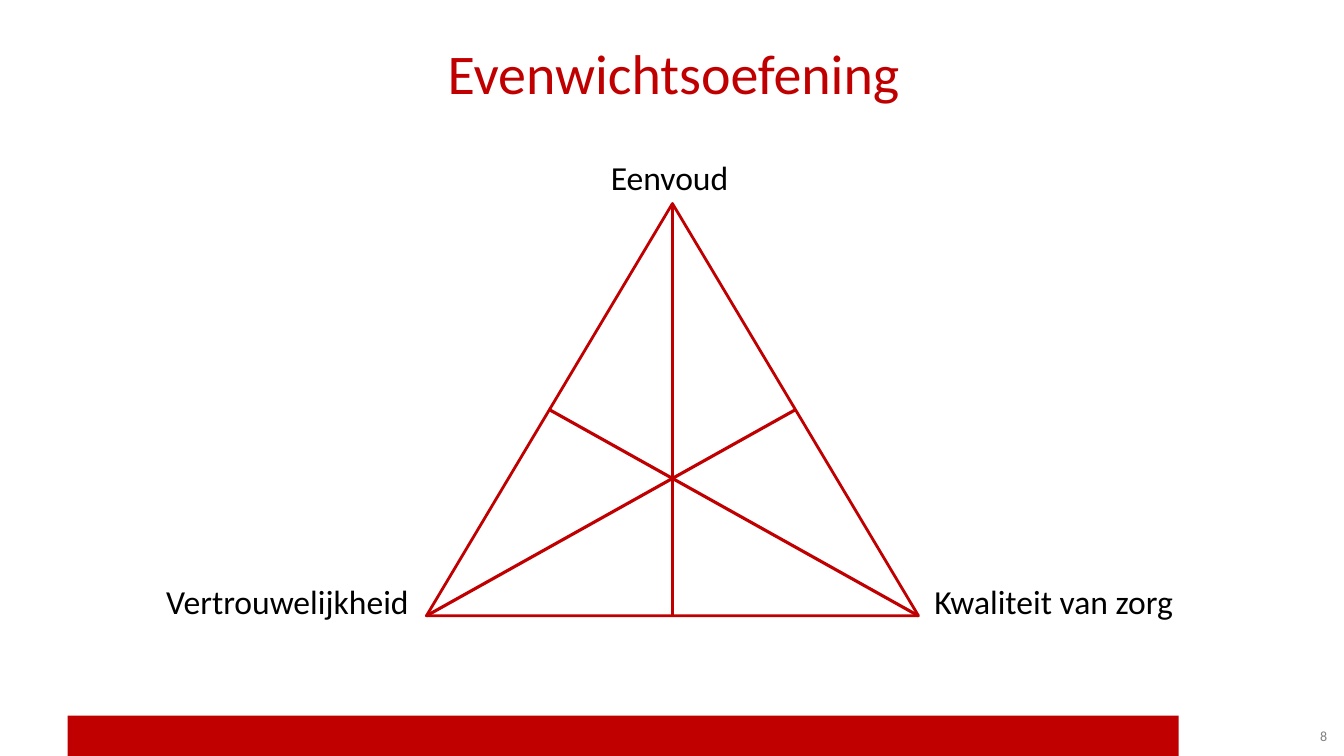
from dataclasses import dataclass

from lxml import etree
from pptx import Presentation
from pptx.dml.color import RGBColor
from pptx.enum.shapes import MSO_CONNECTOR, MSO_SHAPE
from pptx.enum.text import MSO_ANCHOR, PP_ALIGN
from pptx.oxml.ns import qn
from pptx.util import Inches, Pt

RECT, TRIANGLE = MSO_SHAPE.RECTANGLE, MSO_SHAPE.ISOSCELES_TRIANGLE
STRAIGHT = MSO_CONNECTOR.STRAIGHT
TOP, MIDDLE = MSO_ANCHOR.TOP, MSO_ANCHOR.MIDDLE
LEFT, CENTER, RIGHT = PP_ALIGN.LEFT, PP_ALIGN.CENTER, PP_ALIGN.RIGHT

WIDTH, HEIGHT = Inches(13.33), Inches(7.5)
COLUMNS = ROWS = 100
RED, BLACK, GREY = "C00000", "000000", "808080"
FONT = "Calibri"


@dataclass(frozen=True)
class Box:
    col: float
    row: float
    cols: float
    rows: float

    def emu(self) -> tuple[int, int, int, int]:
        return x(self.col), y(self.row), x(self.cols), y(self.rows)


@dataclass(frozen=True)
class Point:
    col: float
    row: float


@dataclass(frozen=True)
class Label:
    text: str
    box: Box
    size: float = 24
    color: str = BLACK
    align: PP_ALIGN = LEFT
    anchor: MSO_ANCHOR = TOP


def x(cols: float) -> int:
    return round(WIDTH * cols / COLUMNS)


def y(rows: float) -> int:
    return round(HEIGHT * rows / ROWS)


def rgb(color: str) -> RGBColor:
    return RGBColor.from_string(color)


def midpoint(a: Point, b: Point) -> Point:
    return Point((a.col + b.col) / 2, (a.row + b.row) / 2)


def add_bar(s, box: Box) -> None:
    sp = s.shapes.add_shape(RECT, *box.emu())
    sp.shadow.inherit = False
    sp.fill.solid()
    sp.fill.fore_color.rgb = rgb(RED)
    sp.line.fill.background()


def add_triangle(s, box: Box) -> None:
    sp = s.shapes.add_shape(TRIANGLE, *box.emu())
    sp.shadow.inherit = False
    sp.fill.background()
    sp.line.color.rgb = rgb(RED)
    sp.line.width = Pt(2)


def add_median(s, start: Point, end: Point) -> None:
    sp = s.shapes.add_connector(
        STRAIGHT, x(start.col), y(start.row), x(end.col), y(end.row))
    sp.line.color.rgb = rgb(RED)
    sp.line.width = Pt(2.25)
    etree.SubElement(sp.element.spPr, qn("a:effectLst"))


def add_label(s, label: Label) -> None:
    tf = s.shapes.add_textbox(*label.box.emu()).text_frame
    tf.word_wrap = True
    tf.vertical_anchor = label.anchor
    p = tf.paragraphs[0]
    p.alignment = label.align
    r = p.add_run()
    r.text = label.text
    r.font.name = FONT
    r.font.size = Pt(label.size)
    r.font.color.rgb = rgb(label.color)


BAR = Box(5.03, 94.67, 82.67, 5.33)
TRI = Box(31.73, 26.93, 36.61, 54.53)
APEX = Point(TRI.col + TRI.cols / 2, TRI.row)
BASE_LEFT = Point(TRI.col, TRI.row + TRI.rows)
BASE_RIGHT = Point(TRI.col + TRI.cols, TRI.row + TRI.rows)
CORNERS = [APEX, BASE_RIGHT, BASE_LEFT]
LABELS = [
    Label("Evenwichtsoefening", Box(5.1, 2.8, 90.02, 13.47), 40, RED, CENTER, MIDDLE),
    Label("Eenvoud", Box(44.71, 20.13, 11.78, 6.67)),
    Label("Kwaliteit van zorg", Box(68.79, 76.13, 24.83, 6.67)),
    Label("Vertrouwelijkheid", Box(11.63, 76.13, 24.83, 6.67)),
    Label("8", Box(91.3, BAR.row, 8.18, BAR.rows), 10, GREY, RIGHT, MIDDLE),
]


def main() -> None:
    prs = Presentation()
    prs.slide_width, prs.slide_height = WIDTH, HEIGHT
    s = prs.slides.add_slide(prs.slide_layouts[6])
    add_bar(s, BAR)
    add_triangle(s, TRI)
    for i, corner in enumerate(CORNERS):
        add_median(s, corner, midpoint(CORNERS[i - 1], CORNERS[i - 2]))
    for label in LABELS:
        add_label(s, label)
    prs.save("out.pptx")


if __name__ == "__main__":
    main()
